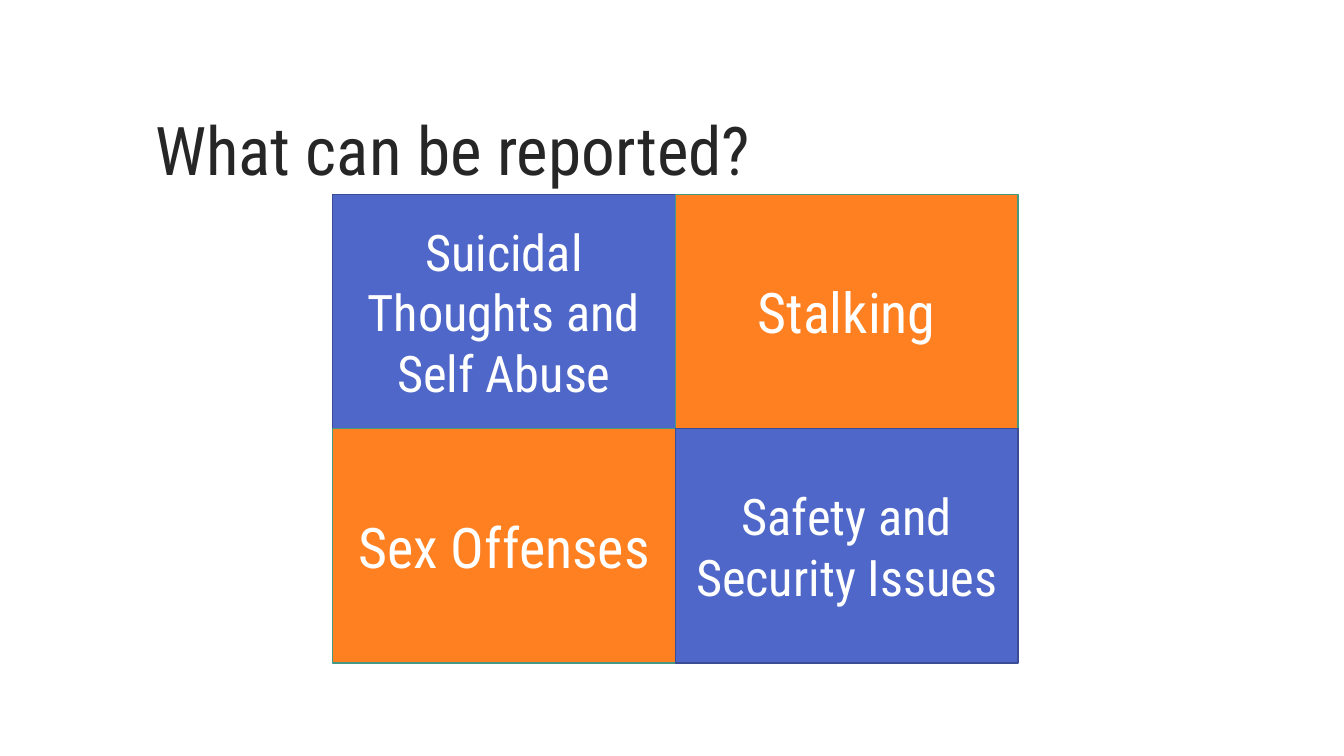
from pptx import Presentation
from pptx.dml.color import RGBColor
from pptx.enum.shapes import MSO_SHAPE
from pptx.enum.text import MSO_ANCHOR, PP_ALIGN
from pptx.util import Pt

RECTANGLE = MSO_SHAPE.RECTANGLE
MIDDLE = MSO_ANCHOR.MIDDLE
LEFT, CENTER = PP_ALIGN.LEFT, PP_ALIGN.CENTER

FONT = "Roboto Condensed"
BLUE, BLUE_EDGE = "4E67C8", "3A4C94"
ORANGE, ORANGE_EDGE = "FF8021", "459881"
GRID_LEFT, GRID_TOP = 237.6, 138.8
TILE_WIDTH, TILE_HEIGHT = 244.8, 167.4
COLUMNS = 2

TOPICS = [
    ("Suicidal Thoughts and Self Abuse", 36, BLUE, BLUE_EDGE),
    ("Stalking", 40, ORANGE, ORANGE_EDGE),
    ("Sex Offenses", 40, ORANGE, ORANGE_EDGE),
    ("Safety and Security Issues", 36, BLUE, BLUE_EDGE),
]


def color(value):
    """Turn a hex string into a colour."""
    return RGBColor.from_string(value)


def write(frame, wording, size, ink, align):
    """Fill a text frame with one vertically centred paragraph."""
    frame.word_wrap = True
    frame.vertical_anchor = MIDDLE
    paragraph = frame.paragraphs[0]
    paragraph.text = wording
    paragraph.alignment = align
    paragraph.font.name = FONT
    paragraph.font.size = Pt(size)
    paragraph.font.color.rgb = color(ink)
    return paragraph


def add_title(slide, wording):
    """Add the slide heading."""
    heading = slide.shapes.add_textbox(Pt(103.7), Pt(57.6), Pt(757.4), Pt(104.4))
    write(heading.text_frame, wording, 48, "262626", LEFT).line_spacing = 0.9


def add_tile(slide, index, topic, size, fill, edge):
    """Add one topic tile at its place in the grid."""
    row, column = divmod(index, COLUMNS)
    tile = slide.shapes.add_shape(
        RECTANGLE,
        Pt(GRID_LEFT + column * TILE_WIDTH),
        Pt(GRID_TOP + row * TILE_HEIGHT),
        Pt(TILE_WIDTH),
        Pt(TILE_HEIGHT),
    )
    tile.shadow.inherit = False
    tile.fill.solid()
    tile.fill.fore_color.rgb = color(fill)
    tile.line.color.rgb = color(edge)
    tile.line.width = Pt(1)
    write(tile.text_frame, topic, size, "FFFFFF", CENTER)


def main():
    """Build and save the slide."""
    deck = Presentation()
    deck.slide_width, deck.slide_height = Pt(960), Pt(540)
    slide = deck.slides.add_slide(deck.slide_layouts[6])
    add_title(slide, "What can be reported?")
    for index, topic in enumerate(TOPICS):
        add_tile(slide, index, *topic)
    deck.save("out.pptx")


if __name__ == "__main__":
    main()
